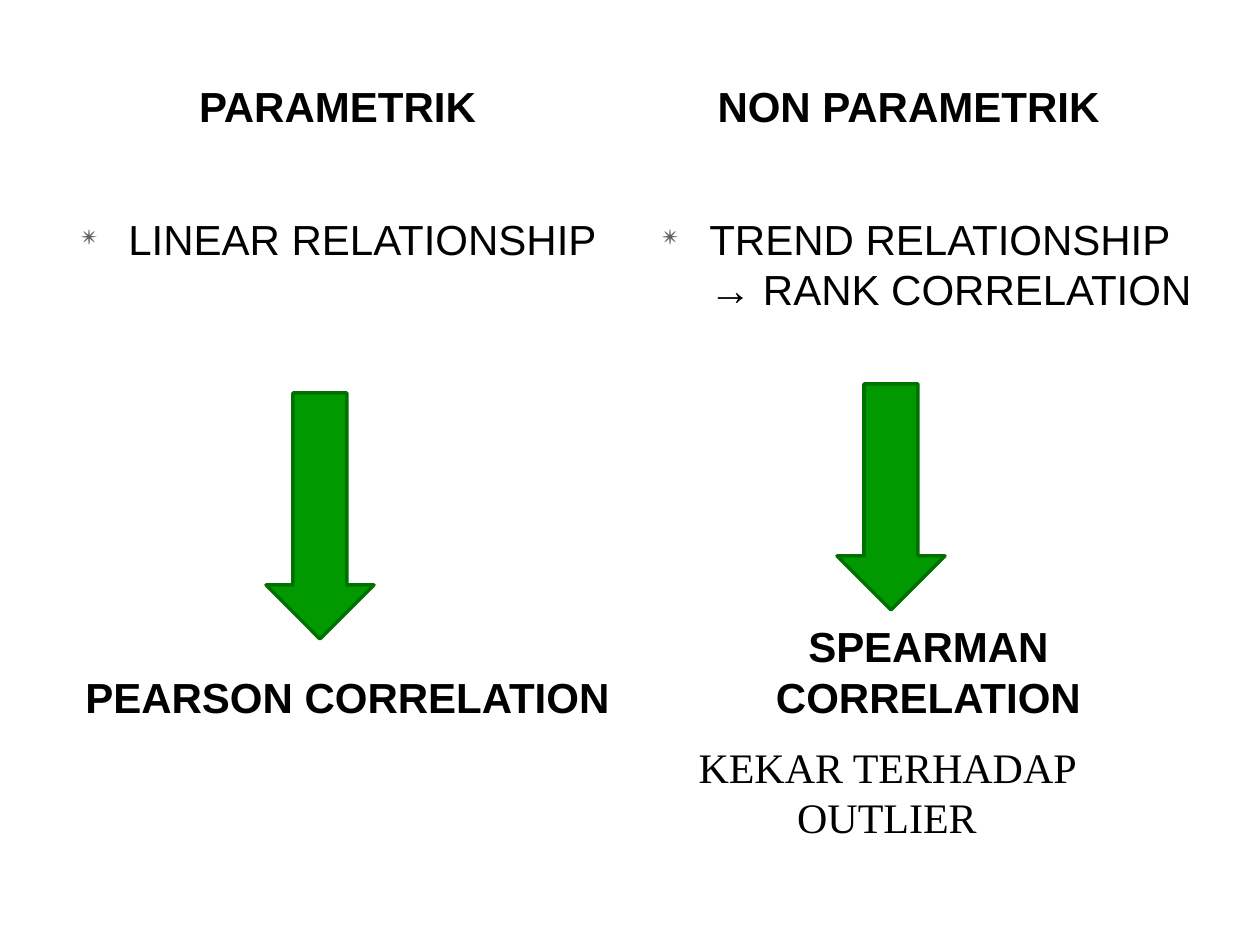
"""Build a slide comparing parametric and non-parametric correlation."""
from lxml.etree import SubElement
from pptx import Presentation
from pptx.dml.color import RGBColor
from pptx.enum.shapes import MSO_SHAPE as Shape
from pptx.enum.text import MSO_ANCHOR as Anchor, PP_ALIGN as Align
from pptx.oxml.ns import qn
from pptx.util import Pt

PX = 914400 // 126
COLORS = {"text": "000000", "bullet": "5F5F5F", "arrow": "009900", "edge": "007100"}
HEADING = {"name": "Arial", "size": Pt(24), "bold": True}
BODY = {"name": "Arial", "size": Pt(24), "bold": False}
REMARK = {"name": "Times New Roman", "size": Pt(24), "bold": False}


def add_text(words, box, style, anchor=Anchor.TOP, bulleted=False):
    frame = slide.shapes.add_textbox(*(n * PX for n in box)).text_frame
    frame.word_wrap = True
    frame.vertical_anchor = anchor
    paragraph = frame.paragraphs[0]
    paragraph.alignment = Align.LEFT if bulleted else Align.CENTER
    if bulleted:
        props = paragraph._p.get_or_add_pPr()
        props.set("marL", str(47 * PX))
        props.set("indent", str(-47 * PX))
        tint = SubElement(props, qn("a:buClr"))
        SubElement(tint, qn("a:srgbClr"), val=COLORS["bullet"])
        SubElement(props, qn("a:buSzPct"), val="65000")
        SubElement(props, qn("a:buChar"), char="✴")
    run = paragraph.add_run()
    run.text = words
    for key, value in style.items():
        setattr(run.font, key, value)
    run.font.color.rgb = RGBColor.from_string(COLORS["text"])


prs = Presentation()
prs.slide_width, prs.slide_height = 1260 * PX, 945 * PX
slide = prs.slides.add_slide(prs.slide_layouts[6])

columns = [
    ("PARAMETRIK", 59, "LINEAR RELATIONSHIP", 69,
     (266, 393, 108, 246), "PEARSON CORRELATION"),
    ("NON PARAMETRIK", 630, "TREND RELATIONSHIP → RANK CORRELATION", 650,
     (837, 384, 108, 226), "SPEARMAN CORRELATION"),
]
for heading, heading_x, relationship, body_x, arrow_box, method in columns:
    add_text(heading, (heading_x, 49, 557, 88), HEADING, Anchor.BOTTOM)
    add_text(relationship, (body_x, 207, 557, 158), BODY, bulleted=True)
    arrow = slide.shapes.add_shape(Shape.DOWN_ARROW, *(n * PX for n in arrow_box))
    arrow.shadow.inherit = False
    arrow.fill.solid()
    arrow.fill.fore_color.rgb = RGBColor.from_string(COLORS["arrow"])
    arrow.line.color.rgb = RGBColor.from_string(COLORS["edge"])
    arrow.line.width = Pt(2)
    add_text(method, (body_x, 640, 557, 88), HEADING, Anchor.BOTTOM)

add_text("KEKAR TERHADAP OUTLIER", (640, 735, 494, 115), REMARK)

prs.save("out.pptx")
